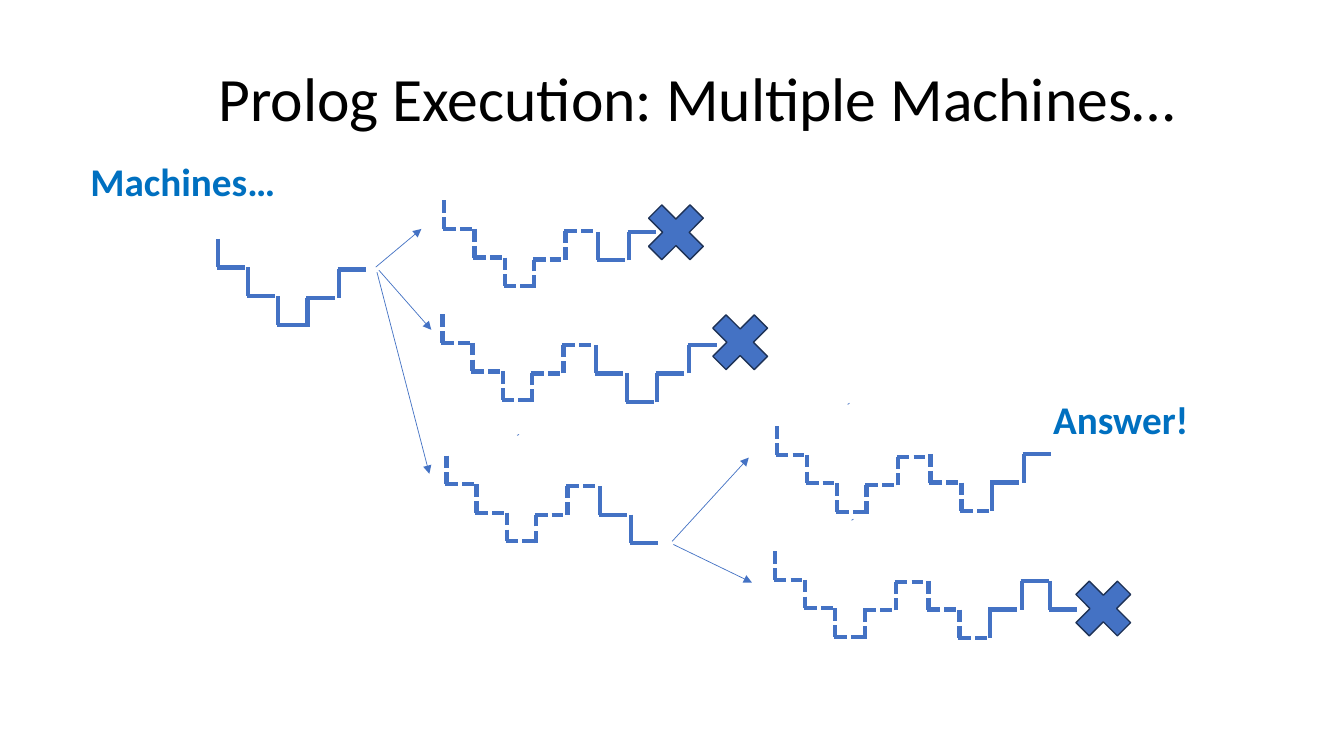
"""Build a slide showing Prolog execution as branching stair-shaped machines."""
from dataclasses import dataclass

import lxml.etree
import pptx
import pptx.dml.color
import pptx.enum.dml
import pptx.enum.shapes
import pptx.enum.text
import pptx.oxml.ns
import pptx.util

FONT = "Calibri"
BLUE = "4472C4"
LABEL_BLUE = "0070C0"
STEP = 0.72
OVERLAP = 0.03
COLUMNS = (0, 0.76, 1.52, 2.26, 3.05, 3.87, 4.65, 5.41, 6.22, 6.93)
SHARED_STEPS = 5
CLIMB_DROP = 0.05
CROSS_SIZE = 2.01


@dataclass(frozen=True)
class Machine:
    """A staircase of D (down) and U (up) steps, dashed ones first."""
    left: float
    top: float
    dashed: str
    solid: str
    tail_drop: float = 0


@dataclass(frozen=True)
class Segment:
    """A straight line between two points."""
    x1: float
    y1: float
    x2: float
    y2: float


@dataclass(frozen=True)
class Label:
    """A bold caption."""
    wording: str
    left: float
    top: float
    width: float
    height: float


MACHINES = (
    Machine(5.49, 6.02, "", "DDDUU"),
    Machine(11.2, 5.05, "DDDUU", "DU", 0.07),
    Machine(11.15, 7.92, "DDDUU", "DDUU", 0.05),
    Machine(11.25, 11.48, "DDDUU", "DD", 0.05),
    Machine(19.58, 10.74, "DDDUUDD", "UU", -0.02),
    Machine(19.53, 13.89, "DDDUUDD", "UUD", 0.03),
)
ARROWS = (
    Segment(9.47, 6.73, 10.62, 5.77),
    Segment(9.55, 6.81, 10.87, 8.31),
    Segment(9.5, 6.86, 10.82, 11.94),
    Segment(16.94, 13.64, 18.87, 11.53),
    Segment(16.97, 13.72, 18.95, 14.68),
)
TICKS = (
    Segment(13.03, 10.97, 13.08, 10.95),
    Segment(21.36, 10.19, 21.41, 10.16),
    Segment(21.46, 13.11, 21.51, 13.08),
)
CROSSES = ((16.03, 4.85), (17.65, 7.62), (26.8, 14.33))
LABELS = (
    Label("Answer!", 26.29, 9.83, 4.34, 1.45),
    Label("Machines…", 2.03, 3.84, 5.69, 1.45),
)


def color(value: str) -> pptx.dml.color.RGBColor:
    """Turn a hex string into a colour."""
    return pptx.dml.color.RGBColor.from_string(value)


def format_text(frame, size: float, value: str, bold: bool) -> None:
    """Format every run of a text frame."""
    for para in frame.paragraphs:
        for span in para.runs:
            span.font.name = FONT
            span.font.size = pptx.util.Pt(size)
            span.font.bold = bold
            span.font.color.rgb = color(value)


def draw_line(page, segment: Segment, weight: float, dashed: bool = False, arrow: bool = False) -> None:
    """Draw a segment, optionally dashed or with an arrowhead."""
    ends = (segment.x1, segment.y1, segment.x2, segment.y2)
    connector = page.shapes.add_connector(
        pptx.enum.shapes.MSO_CONNECTOR.STRAIGHT, *map(pptx.util.Cm, ends))
    connector.line.color.rgb = color(BLUE)
    connector.line.width = pptx.util.Pt(weight)
    if dashed:
        connector.line.dash_style = pptx.enum.dml.MSO_LINE.SQUARE_DOT
    if arrow:
        outline = connector.line._get_or_add_ln()
        lxml.etree.SubElement(outline, pptx.oxml.ns.qn("a:tailEnd"), type="triangle")
    lxml.etree.SubElement(connector._element.spPr, pptx.oxml.ns.qn("a:effectLst"))


def draw_machine(page, machine: Machine) -> None:
    """Draw a staircase, one riser and one tread per step."""
    level = 0
    for index, direction in enumerate(machine.dashed + machine.solid):
        dashed = index < len(machine.dashed)
        if index >= SHARED_STEPS:
            drop = machine.tail_drop
        else:
            drop = CLIMB_DROP if direction == "U" else 0
        x = machine.left + COLUMNS[index]
        start = machine.top + level * STEP + drop
        level += 1 if direction == "D" else -1
        tread = machine.top + level * STEP + drop
        draw_line(page, Segment(x, start, x, tread), 3, dashed)
        draw_line(page, Segment(x - OVERLAP, tread, x + STEP - OVERLAP, tread), 3, dashed)


def draw_cross(page, left: float, top: float) -> None:
    """Draw the mark of a failed machine."""
    size = pptx.util.Cm(CROSS_SIZE)
    cross = page.shapes.add_shape(
        pptx.enum.shapes.MSO_SHAPE.MATH_MULTIPLY, pptx.util.Cm(left), pptx.util.Cm(top), size, size)
    cross.shadow.inherit = False
    cross.fill.solid()
    cross.fill.fore_color.rgb = color(BLUE)
    cross.line.color.rgb = color("1E3256")
    cross.line.width = pptx.util.Pt(1)


def draw_label(page, label: Label) -> None:
    """Draw a caption."""
    place = (label.left, label.top, label.width, label.height)
    box = page.shapes.add_textbox(*map(pptx.util.Cm, place))
    box.text_frame.word_wrap = True
    box.text_frame.auto_size = pptx.enum.text.MSO_AUTO_SIZE.SHAPE_TO_FIT_TEXT
    box.text_frame.text = label.wording
    format_text(box.text_frame, 28, LABEL_BLUE, True)


def draw_title(page) -> None:
    """Place and format the title."""
    title = page.shapes.title
    title.left, title.top = pptx.util.Cm(2.97), pptx.util.Cm(0.71)
    title.width, title.height = pptx.util.Cm(29.21), pptx.util.Cm(3.68)
    title.text_frame.text = "Prolog Execution: Multiple Machines…"
    title.text_frame.vertical_anchor = pptx.enum.text.MSO_ANCHOR.MIDDLE
    title.text_frame.paragraphs[0].alignment = pptx.enum.text.PP_ALIGN.CENTER
    title.text_frame.paragraphs[0].line_spacing = 0.9
    format_text(title.text_frame, 44, "000000", False)


def main() -> None:
    """Build and save the deck."""
    deck = pptx.Presentation()
    deck.slide_width = pptx.util.Cm(33.87)
    deck.slide_height = pptx.util.Cm(19.05)
    page = deck.slides.add_slide(deck.slide_layouts[5])
    draw_title(page)
    for machine in MACHINES:
        draw_machine(page, machine)
    for arrow in ARROWS:
        draw_line(page, arrow, 0.5, arrow=True)
    for tick in TICKS:
        draw_line(page, tick, 0.5, dashed=True)
    for left, top in CROSSES:
        draw_cross(page, left, top)
    for label in LABELS:
        draw_label(page, label)
    deck.save("out.pptx")


if __name__ == "__main__":
    main()
